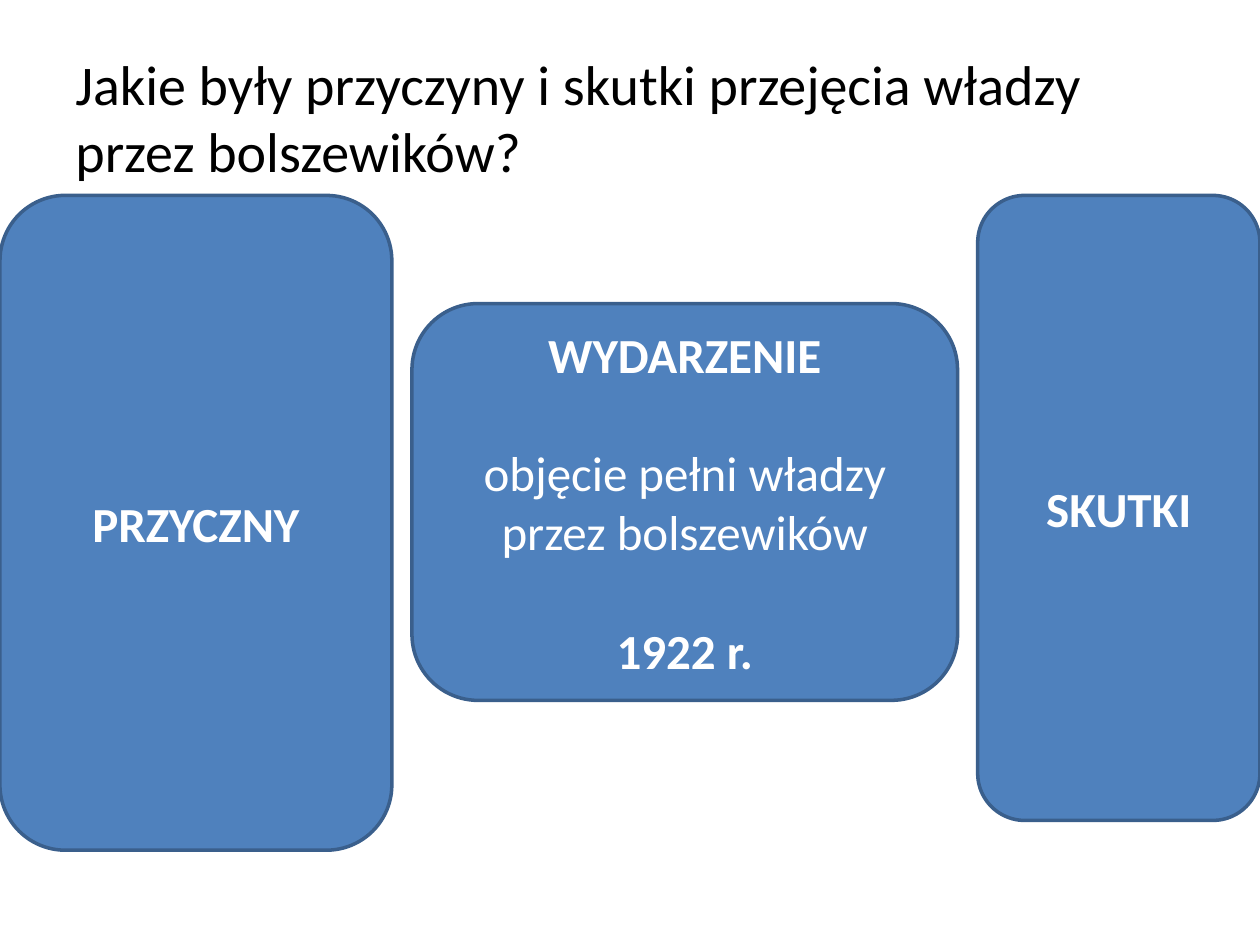
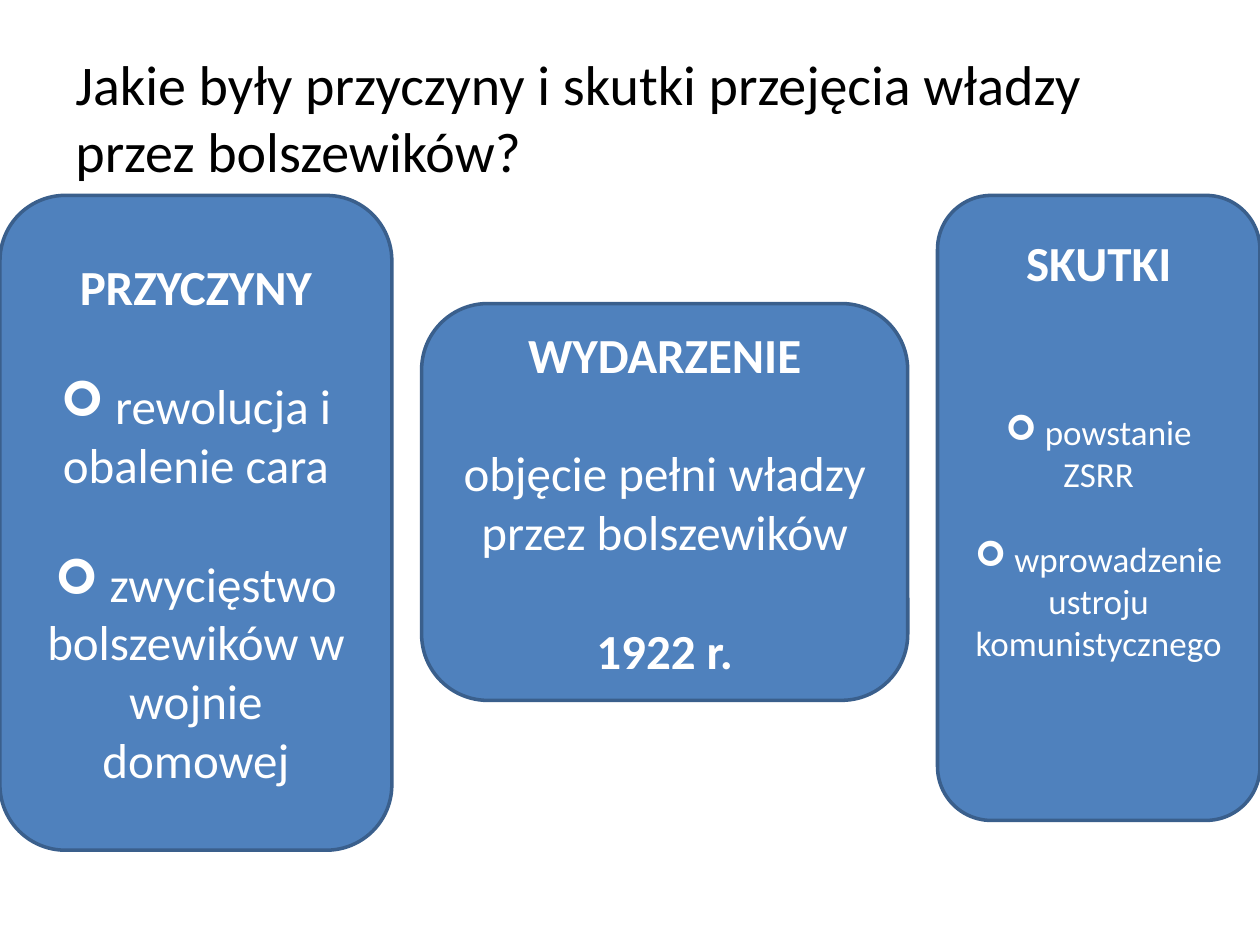
"""Build two slides on the causes and effects of the Bolshevik takeover."""
from dataclasses import dataclass

from lxml.etree import SubElement
from pptx import Presentation
from pptx.dml.color import RGBColor as RGB
from pptx.enum.shapes import MSO_SHAPE as SHAPE
from pptx.enum.text import MSO_ANCHOR as ANCHOR, PP_ALIGN as ALIGN
from pptx.oxml.ns import qn
from pptx.util import Cm, Pt


@dataclass(frozen=True)
class Theme:
    font: str = "Calibri"
    ink: RGB = RGB(0x00, 0x00, 0x00)
    paper: RGB = RGB(0xFF, 0xFF, 0xFF)
    fill: RGB = RGB(0x4F, 0x81, 0xBD)
    line: RGB = RGB(0x3A, 0x5F, 0x8C)
    title: int = 32
    body: int = 28
    small: int = 20
    line_height: float = 1.22


T = Theme()

TITLE = "Jakie były przyczyny i skutki przejęcia władzy przez bolszewików?"
EVENT = [
    dict(text="WYDARZENIE", bold=True),
    dict(text="objęcie pełni władzy przez bolszewików", gap=T.body),
    dict(text="1922 r.", bold=True, gap=T.body),
]
SLIDES = [
    dict(
        causes=[dict(text="PRZYCZNY", bold=True)],
        effects=[dict(text="SKUTKI", bold=True)],
        effects_width=5.69, event_width=11, effects_bottom=0.13,
    ),
    dict(
        causes=[
            dict(text="PRZYCZYNY", bold=True),
            dict(text=" rewolucja i obalenie cara", gap=T.body, bullet="➢"),
            dict(text=" zwycięstwo bolszewików w wojnie domowej",
                 gap=T.body, bullet="➢"),
        ],
        effects=[
            dict(text="SKUTKI", bold=True),
            dict(text=" powstanie ZSRR", size=T.small, gap=2 * T.body, bullet="➢"),
            dict(text=" wprowadzenie ustroju komunistycznego",
                 size=T.small, gap=T.small, bullet="➢"),
        ],
        effects_width=6.5, event_width=9.8, effects_bottom=2.54,
    ),
]

SLIDE_W, SLIDE_H = 25.4, 19.05
BOX_TOP, CAUSES_W, CAUSES_H, EFFECTS_H = 3.94, 7.9, 13.2, 12.6
EVENT_TOP, EVENT_H = 6.12, 8


def style(p, color, size, bold=False):
    for r in p.runs:
        r.font.name, r.font.size, r.font.bold = T.font, Pt(size), bold
        r.font.color.rgb = color


def add_bullet(p, char):
    pPr = p._p.get_or_add_pPr()
    pPr.set("marL", "0")
    pPr.set("indent", "0")
    SubElement(pPr, qn("a:buFont")).set("typeface", "Wingdings")
    SubElement(pPr, qn("a:buChar")).set("char", char)


def add_title(s):
    tf = s.shapes.add_textbox(Cm(1.27), Cm(0.76), Cm(22.86), Cm(3.18)).text_frame
    tf.word_wrap, tf.vertical_anchor = True, ANCHOR.MIDDLE
    tf.text = TITLE
    style(tf.paragraphs[0], T.ink, T.title)


def add_box(s, left, top, width, height, items, bottom=0.13):
    sp = s.shapes.add_shape(SHAPE.ROUNDED_RECTANGLE,
                            Cm(left), Cm(top), Cm(width), Cm(height))
    sp.shadow.inherit = False
    sp.fill.solid()
    sp.fill.fore_color.rgb = T.fill
    sp.line.color.rgb, sp.line.width = T.line, Pt(2)
    tf = sp.text_frame
    tf.word_wrap, tf.vertical_anchor = True, ANCHOR.MIDDLE
    tf.margin_left = tf.margin_right = Cm(0.3)
    tf.margin_bottom = Cm(bottom)
    tf.text = "\n".join(item["text"] for item in items)
    for p, item in zip(tf.paragraphs, items):
        p.alignment = ALIGN.CENTER
        p.space_before = Pt(item.get("gap", 0) * T.line_height)
        if "bullet" in item:
            add_bullet(p, item["bullet"])
        style(p, T.paper, item.get("size", T.body), item.get("bold", False))


def add_slide(prs, data):
    s = prs.slides.add_slide(prs.slide_layouts[6])
    effects_left = SLIDE_W - data["effects_width"]
    event_left = (CAUSES_W + effects_left - data["event_width"]) / 2
    add_title(s)
    add_box(s, 0, BOX_TOP, CAUSES_W, CAUSES_H, data["causes"])
    add_box(s, effects_left, BOX_TOP, data["effects_width"], EFFECTS_H,
            data["effects"], data["effects_bottom"])
    add_box(s, event_left, EVENT_TOP, data["event_width"], EVENT_H, EVENT)


def main():
    prs = Presentation()
    prs.slide_width, prs.slide_height = Cm(SLIDE_W), Cm(SLIDE_H)
    for data in SLIDES:
        add_slide(prs, data)
    prs.save("out.pptx")


if __name__ == "__main__":
    main()
